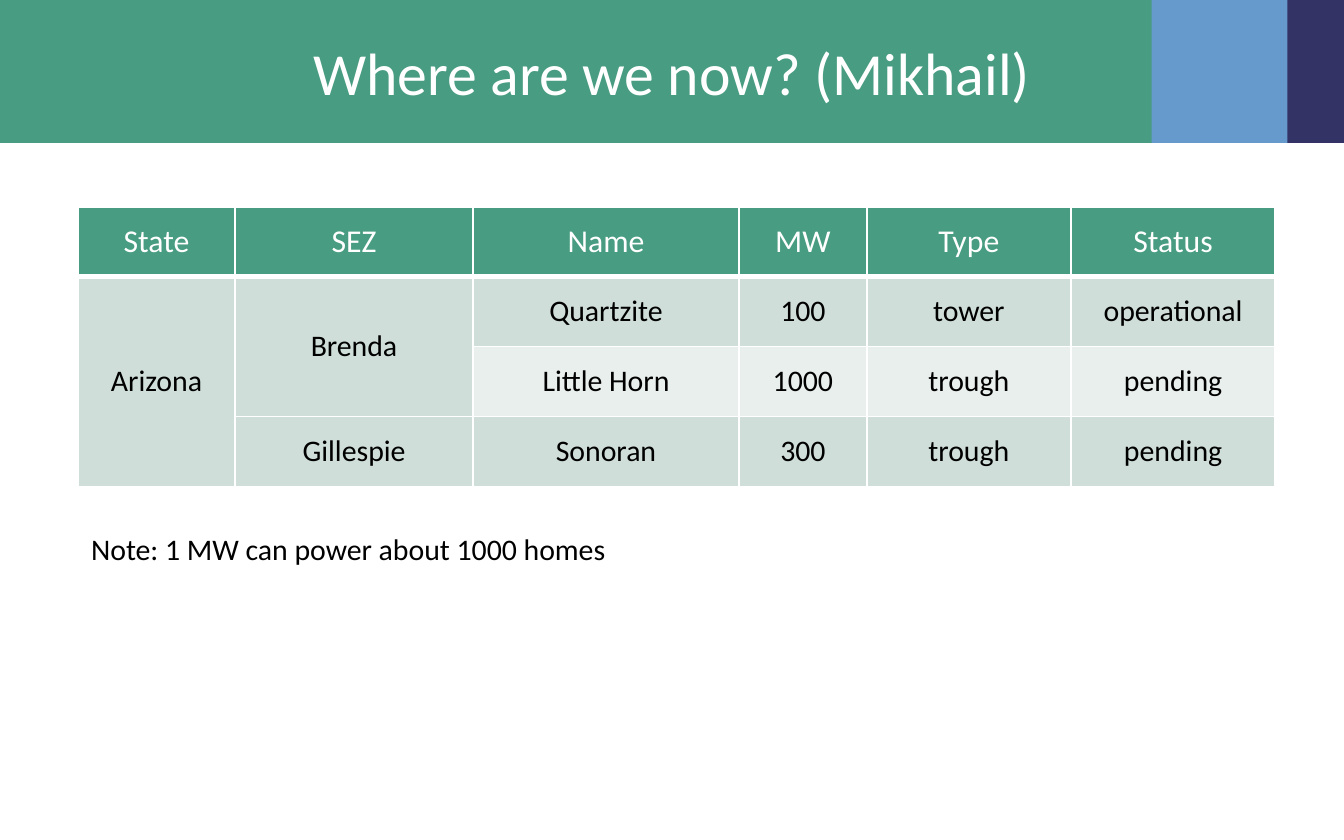
from dataclasses import dataclass

from lxml import etree
from pptx import Presentation, util as u
from pptx.dml.color import RGBColor
from pptx.enum import shapes, text
from pptx.oxml.ns import qn


@dataclass(frozen=True)
class Theme:
    font: str = "Calibri"
    green: str = "489C81"
    blue: str = "6699CC"
    navy: str = "333366"
    band_dark: str = "CFDED8"
    band_light: str = "E9EFED"
    white: str = "FFFFFF"
    black: str = "000000"
    title_size: int = 32
    header_size: int = 17
    body_size: int = 16
    rule: int = 1
    header_rule: int = 3


@dataclass(frozen=True)
class Area:
    left: float
    top: float
    width: float
    height: float

    def emu(self) -> list:
        return [u.Inches(v) for v in (self.left, self.top, self.width, self.height)]


@dataclass(frozen=True)
class Band:
    left: float
    right: float
    color: str


THEME = Theme()
WIDTH, HEIGHT = 10, 6.25
BANNER_HEIGHT = 0.17 * HEIGHT
MARGIN = 0.58

# Back to front, each band slightly under the next
BANDS = [
    Band(9.43, WIDTH, THEME.navy),
    Band(8.53, 9.58, THEME.blue),
    Band(0, 8.57, THEME.green),
]

COLUMNS = [1.17, 1.77, 1.98, 0.95, 1.52, 1.52]
ROW_HEIGHT = 0.52
ROWS = [
    ["State", "SEZ", "Name", "MW", "Type", "Status"],
    ["Arizona", "Brenda", "Quartzite", "100", "tower", "operational"],
    ["", "", "Little Horn", "1000", "trough", "pending"],
    ["", "Gillespie", "Sonoran", "300", "trough", "pending"],
]
# First and last cell (row, column) of each merged block
MERGES = [((1, 0), (3, 0)), ((1, 1), (2, 1))]


def add_span(para, words: str, size: int, color: str) -> None:
    span = para.add_run()
    span.text = words
    span.font.name = THEME.font
    span.font.size = u.Pt(size)
    span.font.color.rgb = RGBColor.from_string(color)


def add_band(page, band: Band) -> None:
    area = Area(band.left, 0, band.right - band.left, BANNER_HEIGHT)
    box = page.shapes.add_shape(shapes.MSO_SHAPE.RECTANGLE, *area.emu())
    box.shadow.inherit = False
    box.fill.solid()
    box.fill.fore_color.rgb = RGBColor.from_string(band.color)
    box.line.fill.background()


def add_text(page, area: Area, words: str, size: int, color: str,
             align=text.PP_ALIGN.LEFT, anchor=text.MSO_ANCHOR.TOP) -> None:
    frame = page.shapes.add_textbox(*area.emu()).text_frame
    frame.word_wrap = True
    frame.vertical_anchor = anchor
    para = frame.paragraphs[0]
    para.alignment = align
    add_span(para, words, size, color)


def add_border(cell, side: str, points: int) -> None:
    line = etree.SubElement(cell._tc.get_or_add_tcPr(), qn(f"a:ln{side}"),
                            w=str(u.Pt(points)))
    fill = etree.SubElement(line, qn("a:solidFill"))
    etree.SubElement(fill, qn("a:srgbClr"), val=THEME.white)


def style_cell(cell, row: int) -> None:
    header = row == 0
    cell.vertical_anchor = text.MSO_ANCHOR.MIDDLE
    cell.margin_left = cell.margin_right = u.Inches(0.1)
    cell.margin_top = cell.margin_bottom = u.Inches(0.04)
    for side in "LRTB":
        thick = header and side == "B"
        add_border(cell, side, THEME.header_rule if thick else THEME.rule)
    banding = THEME.band_dark if row % 2 else THEME.band_light
    cell.fill.solid()
    cell.fill.fore_color.rgb = RGBColor.from_string(THEME.green if header else banding)


def add_projects(page, left: float, top: float) -> None:
    area = Area(left, top, sum(COLUMNS), ROW_HEIGHT * len(ROWS))
    table = page.shapes.add_table(len(ROWS), len(COLUMNS), *area.emu()).table
    for column, width in zip(table.columns, COLUMNS):
        column.width = u.Inches(width)
    for r, words_in_row in enumerate(ROWS):
        table.rows[r].height = u.Inches(ROW_HEIGHT)
        size, color = ((THEME.body_size, THEME.black) if r
                       else (THEME.header_size, THEME.white))
        for c, words in enumerate(words_in_row):
            cell = table.cell(r, c)
            style_cell(cell, r)
            if words:
                para = cell.text_frame.paragraphs[0]
                para.alignment = text.PP_ALIGN.CENTER
                add_span(para, words, size, color)
    for first, last in MERGES:
        table.cell(*first).merge(table.cell(*last))


def main() -> None:
    deck = Presentation()
    deck.slide_width, deck.slide_height = u.Inches(WIDTH), u.Inches(HEIGHT)
    page = deck.slides.add_slide(deck.slide_layouts[6])

    # Banner and title
    for band in BANDS:
        add_band(page, band)
    add_text(page, Area(0.05 * WIDTH, 0.12, 0.9 * WIDTH, 0.83),
             "Where are we now? (Mikhail)", THEME.title_size, THEME.white,
             text.PP_ALIGN.CENTER, text.MSO_ANCHOR.MIDDLE)

    # Project table and its note
    add_projects(page, MARGIN, 1.54)
    add_text(page, Area(MARGIN, 3.9, 8.75, 0.37),
             "Note: 1 MW can power about 1000 homes", THEME.body_size, THEME.black)

    deck.save("out.pptx")


if __name__ == "__main__":
    main()
